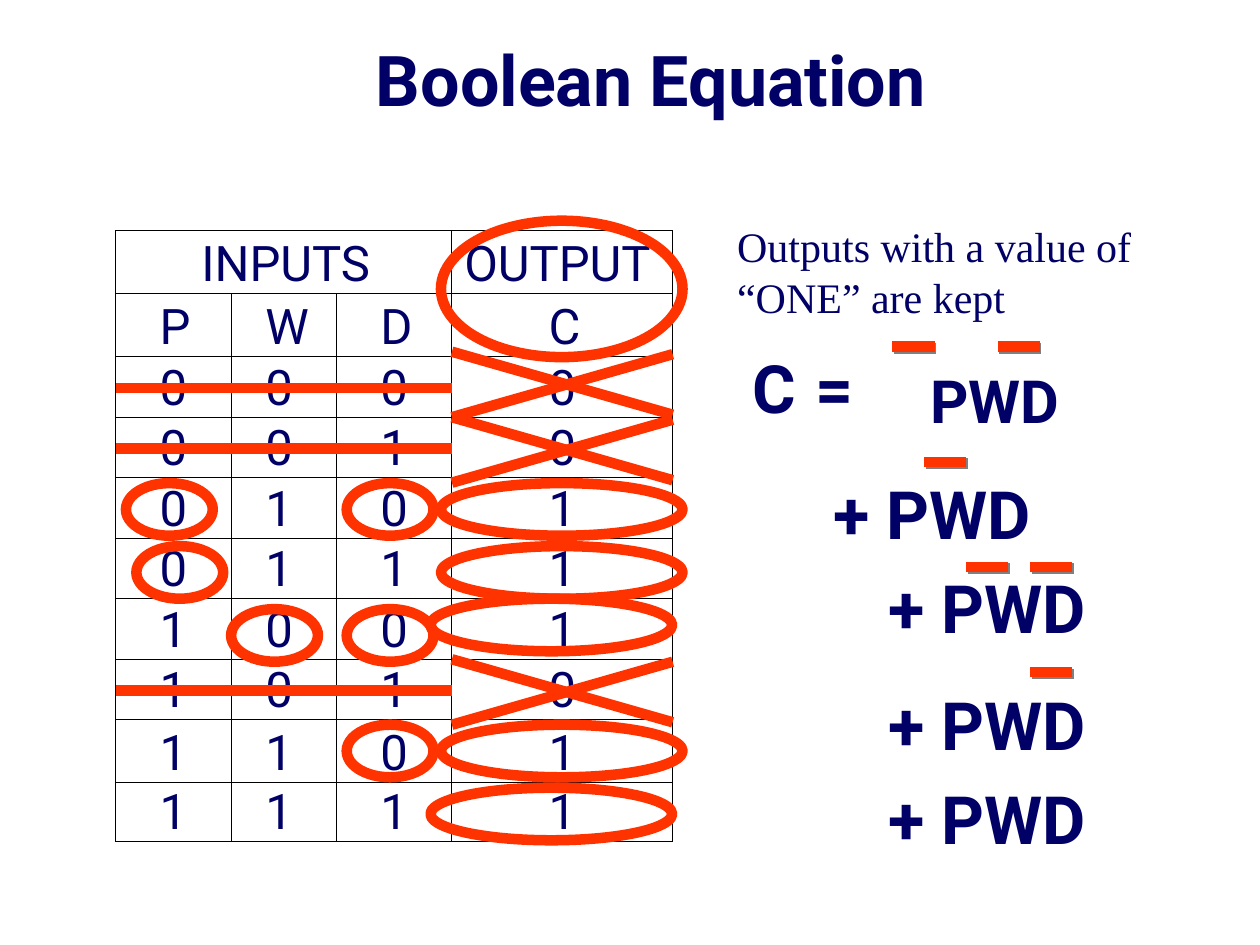
from typing import NamedTuple

from lxml import etree
from pptx import Presentation
from pptx.dml.color import RGBColor
from pptx.enum.shapes import MSO_CONNECTOR, MSO_SHAPE
from pptx.enum.text import MSO_ANCHOR, PP_ALIGN
from pptx.oxml import parse_xml
from pptx.oxml.ns import nsdecls, qn
from pptx.util import Cm, Pt

STRAIGHT = MSO_CONNECTOR.STRAIGHT
OVAL = MSO_SHAPE.OVAL
LEFT, CENTER = PP_ALIGN.LEFT, PP_ALIGN.CENTER
TOP, MIDDLE, BOTTOM = MSO_ANCHOR.TOP, MSO_ANCHOR.MIDDLE, MSO_ANCHOR.BOTTOM

NAVY, RED = "000066", "FF3300"
SANS, SERIF = "Roboto", "Times New Roman"

TABLE_LEFT, TABLE_TOP = 2.33, 4.65
COLUMN_WIDTHS = [2.33, 2.12, 2.33, 4.45]
COLUMN_INDENTS = [0.89, 0.69, 0.89, 1.95]
ROW_HEIGHTS = [1.27] * 2 + [1.22] * 6 + [1.27, 1.17]
OUTPUT_LEFT = TABLE_LEFT + sum(COLUMN_WIDTHS[:3])
OUTPUT_RIGHT = OUTPUT_LEFT + COLUMN_WIDTHS[3]
TRUTH_ROWS = ["PWDC", "0000", "0010", "0101", "0111", "1001", "1010", "1101", "1111"]


class Term(NamedTuple):
    text: str
    left: float
    top: float
    size: int = 38


class Ring(NamedTuple):
    left: float
    top: float
    width: float
    height: float = 1.06


class Overbar(NamedTuple):
    left: float
    top: float


class Rejected(NamedTuple):
    """A row whose output is zero: strike height and top of its cross."""
    strike: float
    cross: float


TERMS = [
    Term("C\t=", 15.18, 7.0),
    Term("PWD", 18.75, 7.33, 34),
    Term("+ PWD", 16.8, 9.54),
    Term("+ PWD", 17.91, 11.44),
    Term("+ PWD", 17.91, 13.78),
    Term("+ PWD", 17.91, 15.68),
]
OVERBARS = [
    Overbar(17.99, 6.99), Overbar(20.11, 6.99), Overbar(18.63, 9.31),
    Overbar(19.47, 11.43), Overbar(20.76, 11.43), Overbar(20.76, 13.55),
]
OUTPUT_RINGS = [
    Ring(left, top, 4.87)
    for left, top in [(8.89, 9.74), (8.89, 11.01), (8.68, 12.07), (8.89, 14.61), (8.68, 15.88)]
]
INPUT_RINGS = [
    Ring(left, top, 1.75)
    for left, top in [(2.54, 9.74), (2.75, 11.01), (6.99, 12.28),
                      (6.99, 9.74), (6.99, 14.61), (4.66, 12.28)]
]
HEADING_RING = Ring(8.89, 4.45, 4.87, 2.75)
REJECTED_ROWS = [Rejected(7.82, 7.09), Rejected(9.04, 8.41), Rejected(13.92, 13.29)]


def color(value: str) -> RGBColor:
    return RGBColor.from_string(value)


def write(frame, text: str, *, size: int, font: str = SANS, bold: bool = False,
          align=LEFT) -> None:
    paragraph = frame.paragraphs[0]
    paragraph.alignment = align
    run = paragraph.add_run()
    run.text = text
    run.font.name = font
    run.font.size = Pt(size)
    run.font.bold = bold
    run.font.color.rgb = color(NAVY)


def add_text(slide, text: str, left: float, top: float, width: float, height: float,
             *, anchor=TOP, **style) -> None:
    frame = slide.shapes.add_textbox(Cm(left), Cm(top), Cm(width), Cm(height)).text_frame
    frame.word_wrap = True
    frame.vertical_anchor = anchor
    frame.margin_left = frame.margin_right = frame.margin_top = frame.margin_bottom = 0
    write(frame, text, **style)


def add_line(slide, x1: float, y1: float, x2: float, y2: float, shadow: bool = False) -> None:
    line = slide.shapes.add_connector(STRAIGHT, Cm(x1), Cm(y1), Cm(x2), Cm(y2))
    line.line.color.rgb = color(RED)
    line.line.width = Pt(6)
    effects = etree.SubElement(line._element.spPr, qn("a:effectLst"))
    if shadow:
        effects.append(parse_xml(
            f'<a:outerShdw {nsdecls("a")} blurRad="0" dist="17961" dir="2700000">'
            '<a:srgbClr val="808080"/></a:outerShdw>'))


def add_ring(slide, ring: Ring) -> None:
    oval = slide.shapes.add_shape(OVAL, *(Cm(length) for length in ring))
    oval.shadow.inherit = False
    oval.fill.background()
    oval.line.color.rgb = color(RED)
    oval.line.width = Pt(6)


def add_borders(cell) -> None:
    properties = cell._tc.get_or_add_tcPr()
    for position, side in enumerate(("lnL", "lnR", "lnT", "lnB")):
        properties.insert(position, parse_xml(
            f'<a:{side} {nsdecls("a")} w="9525"><a:solidFill>'
            f'<a:srgbClr val="000000"/></a:solidFill></a:{side}>'))


def fill_cell(cell, text: str, indent: float) -> None:
    cell.margin_left = Cm(indent)
    cell.margin_right = cell.margin_top = cell.margin_bottom = 0
    cell.vertical_anchor = BOTTOM
    write(cell.text_frame, text, size=28)


def add_truth_table(slide) -> None:
    table = slide.shapes.add_table(
        len(ROW_HEIGHTS), len(COLUMN_WIDTHS), Cm(TABLE_LEFT), Cm(TABLE_TOP),
        Cm(sum(COLUMN_WIDTHS)), Cm(sum(ROW_HEIGHTS))).table
    table.first_row = table.horz_banding = False
    for column, width in zip(table.columns, COLUMN_WIDTHS):
        column.width = Cm(width)
    for row, height in zip(table.rows, ROW_HEIGHTS):
        row.height = Cm(height)
    for cell in table.iter_cells():
        cell.fill.background()
        add_borders(cell)
    table.cell(0, 0).merge(table.cell(0, 2))
    fill_cell(table.cell(0, 0), "INPUTS", 1.73)
    fill_cell(table.cell(0, 3), "OUTPUT", 0.25)
    for row, values in enumerate(TRUTH_ROWS, start=1):
        for column, (value, indent) in enumerate(zip(values, COLUMN_INDENTS)):
            fill_cell(table.cell(row, column), value, indent)


def main() -> None:
    presentation = Presentation()
    presentation.slide_width, presentation.slide_height = Cm(25.4), Cm(19.05)
    slide = presentation.slides.add_slide(presentation.slide_layouts[6])

    add_text(slide, "Boolean Equation", 1.69, 0, 22.86, 3.18,
             anchor=MIDDLE, size=40, bold=True, align=CENTER)
    add_truth_table(slide)
    add_text(slide, "Outputs with a value of “ONE” are kept", 14.86, 4.45, 8.2, 2.1,
             size=24, font=SERIF)
    for term in TERMS:
        add_text(slide, term.text, term.left, term.top, 6, 1.65, size=term.size, bold=True)
    for bar in OVERBARS:
        add_line(slide, bar.left, bar.top, bar.left + 0.85, bar.top, shadow=True)
    for ring in [*OUTPUT_RINGS, *INPUT_RINGS, HEADING_RING]:
        add_ring(slide, ring)
    for strike, cross in REJECTED_ROWS:
        add_line(slide, TABLE_LEFT, strike, OUTPUT_LEFT, strike)
        add_line(slide, OUTPUT_LEFT, cross, OUTPUT_RIGHT, cross + 1.27)
        add_line(slide, OUTPUT_RIGHT, cross + 0.05, OUTPUT_LEFT, cross + 1.32)

    presentation.save("out.pptx")


if __name__ == "__main__":
    main()
